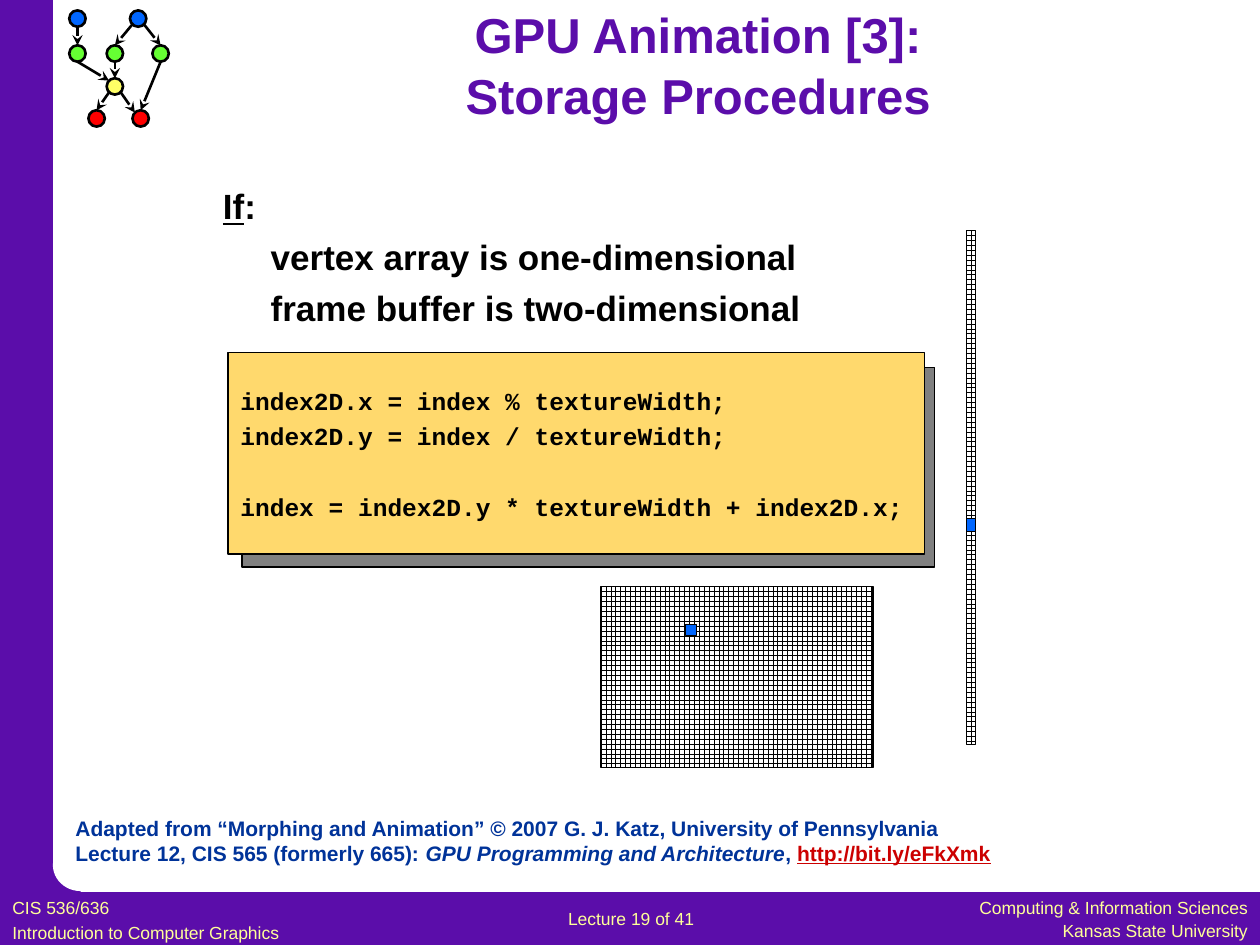
from dataclasses import dataclass
from math import cos, radians, sin

from lxml.etree import SubElement
from pptx import Presentation
from pptx.dml.color import RGBColor
from pptx.enum.dml import MSO_PATTERN
from pptx.enum.shapes import MSO_CONNECTOR, MSO_SHAPE as Preset
from pptx.enum.text import MSO_ANCHOR as Anchor, PP_ALIGN as Align
from pptx.oxml.ns import qn
from pptx.util import Inches, Pt


@dataclass(frozen=True)
class Theme:
    purple: str = "5B0DAA"
    white: str = "FFFFFF"
    black: str = "000000"
    blue: str = "0066FF"
    green: str = "66FF33"
    yellow: str = "FFFF66"
    red: str = "FF0000"
    pale: str = "FFFF99"
    citation: str = "003399"
    link: str = "CC0000"
    panel: str = "FFD96D"
    shade: str = "808080"
    font: str = "Arial"
    code_font: str = "Courier New"
    title_size: int = 28
    body_size: int = 20
    code_size: int = 14
    citation_size: int = 12
    footer_size: int = 10
    thin: float = 0.75
    thick: float = 1.5


THEME = Theme()


@dataclass(frozen=True)
class Box:
    left: float
    top: float
    width: float
    height: float

    def share(self, x, y, width, height):
        """Return the box covering the given shares of this one."""
        return Box(self.left + x * self.width, self.top + y * self.height,
                   width * self.width, height * self.height)

    def lengths(self):
        return [Inches(v) for v in (self.left, self.top, self.width, self.height)]


PAGE = Box(0, 0, 10, 7.5)


def color(value):
    return RGBColor.from_string(value)


def add_block(shapes, box, fill, line=None, preset=Preset.RECTANGLE, pattern=None):
    shape = shapes.add_shape(preset, *box.lengths())
    shape.shadow.inherit = False
    if pattern is None:
        shape.fill.solid()
    else:
        shape.fill.patterned()
        shape.fill.pattern = pattern
        shape.fill.back_color.rgb = color(THEME.white)
    shape.fill.fore_color.rgb = color(fill)
    if line is None:
        shape.line.fill.background()
    else:
        shape.line.color.rgb = color(THEME.black)
        shape.line.width = Pt(line)
    return shape


def add_arrow(shapes, start, end):
    points = [Inches(v) for v in (*start, *end)]
    arrow = shapes.add_connector(MSO_CONNECTOR.STRAIGHT, *points)
    arrow.line.color.rgb = color(THEME.black)
    arrow.line.width = Pt(THEME.thick)
    properties = arrow._element.spPr
    SubElement(properties.find(qn("a:ln")), qn("a:tailEnd"), type="stealth")
    SubElement(properties, qn("a:effectLst"))


def write(frame, lines, size, ink, font=THEME.font, bold=False, align=Align.LEFT,
          gap=0, anchor=Anchor.TOP):
    """Write lines, each a list of (text, font changes) runs."""
    frame.word_wrap = True
    frame.vertical_anchor = anchor
    for index, runs in enumerate(lines):
        paragraph = frame.add_paragraph() if index else frame.paragraphs[0]
        paragraph.alignment = align
        paragraph.space_before = Pt(gap if index else 0)
        for text, changes in runs:
            run = paragraph.add_run()
            run.text = text
            run.font.name, run.font.size = font, Pt(size)
            run.font.bold = bold
            run.font.color.rgb = color(changes.get("ink", ink))
            run.font.italic = changes.get("italic", False)
            run.font.underline = changes.get("underline", False)
    return frame.paragraphs


def plain(*lines):
    return [[(line, {})] for line in lines]


def frame_page(shapes, box):
    """Side and bottom bands joined by a rounded inner corner."""
    for band in ((0, 0.944, 1, 0.056), (0, 0, 0.042, 1), (0.02, 0.913, 0.044, 0.059)):
        add_block(shapes, box.share(*band), THEME.purple)
    add_block(shapes, box.share(0.042, 0.888, 0.044, 0.055), THEME.white,
              preset=Preset.OVAL)


def node_graph(shapes, box):
    group = shapes.add_group_shape().shapes
    size = 0.13
    span_x, span_y = box.width - size, box.height - size
    nodes = {"source": (0, 0, THEME.blue), "fork": (0.73, 0, THEME.blue),
             "left": (0, 0.35, THEME.green), "middle": (0.45, 0.35, THEME.green),
             "right": (1, 0.35, THEME.green), "join": (0.45, 0.68, THEME.yellow),
             "sink": (0.23, 1, THEME.red), "last": (0.76, 1, THEME.red)}
    for x, y, fill in nodes.values():
        add_block(group, Box(box.left + x * span_x, box.top + y * span_y, size, size),
                  fill, THEME.thick, Preset.OVAL)

    def rim(name, degrees):
        x, y, _ = nodes[name]
        angle = radians(degrees)
        return (box.left + x * span_x + size / 2 * (1 + cos(angle)),
                box.top + y * span_y + size / 2 * (1 + sin(angle)))

    up, down, down_left, down_right, up_left = 270, 90, 135, 45, 225
    for start, leave, end, reach in (
            ("source", down, "left", up), ("fork", down_left, "middle", up),
            ("fork", down_right, "right", up), ("left", down, "join", up_left),
            ("middle", down, "join", up), ("right", down, "last", up),
            ("join", down_right, "last", up_left), ("join", down_left, "sink", up)):
        add_arrow(group, rim(start, leave), rim(end, reach))


def footer(shapes, box):
    columns = (
        ((0, 0, 0.295, 1), Align.LEFT, 2.2,
         ("CIS 536/636", "Introduction to Computer Graphics")),
        ((0.441, 0.19, 0.152, 0.62), Align.LEFT, 0, ("Lecture 19 of 41",)),
        ((0.718, 0, 0.282, 1), Align.RIGHT, 0.8,
         ("Computing & Information Sciences", "Kansas State University")))
    for shares, align, gap, lines in columns:
        text = shapes.add_textbox(*box.share(*shares).lengths())
        write(text.text_frame, plain(*lines), THEME.footer_size, THEME.pale,
              align=align, gap=gap)


def heading(title, box):
    title.left, title.top, title.width, title.height = box.lengths()
    lines = plain("GPU Animation [3]:", "Storage Procedures")
    for paragraph in write(title.text_frame, lines, THEME.title_size, THEME.purple,
                           bold=True, align=Align.CENTER, anchor=Anchor.MIDDLE):
        paragraph.line_spacing = 1.05


def conditions(shapes, box):
    text = shapes.add_textbox(*box.lengths())
    lines = [[("If", {"underline": True}), (":", {})],
             *plain("vertex array is one-dimensional", "frame buffer is two-dimensional")]
    paragraphs = write(text.text_frame, lines, THEME.body_size, THEME.black,
                       bold=True, gap=5)
    for paragraph in paragraphs[1:]:
        paragraph._p.get_or_add_pPr().set("marL", str(Inches(0.38)))


def code_panel(shapes, box):
    group = shapes.add_group_shape().shapes
    add_block(group, box.share(0.02, 0.07, 0.98, 0.93), THEME.shade, THEME.thin)
    panel = add_block(group, box.share(0, 0, 0.985, 0.94), THEME.panel, THEME.thin)
    lines = plain("index2D.x = index % textureWidth;",
                  "index2D.y = index / textureWidth;",
                  "index = index2D.y * textureWidth + index2D.x;")
    paragraphs = write(panel.text_frame, lines, THEME.code_size, THEME.black,
                       THEME.code_font, bold=True, gap=3.5, anchor=Anchor.MIDDLE)
    paragraphs[-1].space_before = Pt(23.5)


def memory_grid(shapes, box, cell):
    """Gridded storage with one marked cell, given in shares of the box."""
    group = shapes.add_group_shape().shapes
    add_block(group, box, THEME.black, THEME.thin, pattern=MSO_PATTERN.LARGE_GRID)
    add_block(group, box.share(*cell), THEME.blue, THEME.thin)


def citation(shapes, box):
    text = shapes.add_textbox(*box.lengths())
    lines = [
        *plain("Adapted from “Morphing and Animation” © 2007 G. J. Katz, "
               "University of Pennsylvania"),
        [("Lecture 12, CIS 565 (formerly 665): ", {}),
         ("GPU Programming and Architecture", {"italic": True}),
         (", ", {}),
         ("http://bit.ly/eFkXmk", {"ink": THEME.link, "underline": True})]]
    write(text.text_frame, lines, THEME.citation_size, THEME.citation, bold=True)


def main():
    presentation = Presentation()
    presentation.slide_width, presentation.slide_height = PAGE.lengths()[2:]
    slide = presentation.slides.add_slide(presentation.slide_layouts[5])
    shapes = slide.shapes
    frame_page(shapes, PAGE)
    node_graph(shapes, PAGE.share(0.055, 0.011, 0.079, 0.123))
    footer(shapes, PAGE.share(0, 0.943, 1, 0.057))
    heading(shapes.title, PAGE.share(0.125, 0.011, 0.858, 0.111))
    citation(shapes, PAGE.share(0.05, 0.856, 0.758, 0.067))
    code_panel(shapes, PAGE.share(0.181, 0.373, 0.561, 0.227))
    conditions(shapes, PAGE.share(0.167, 0.189, 0.649, 0.177))
    memory_grid(shapes, PAGE.share(0.477, 0.621, 0.216, 0.191), (0.31, 0.21, 0.04, 0.06))
    memory_grid(shapes, PAGE.share(0.767, 0.244, 0.007, 0.544), (0, 0.56, 1, 0.025))
    presentation.save("out.pptx")


if __name__ == "__main__":
    main()
